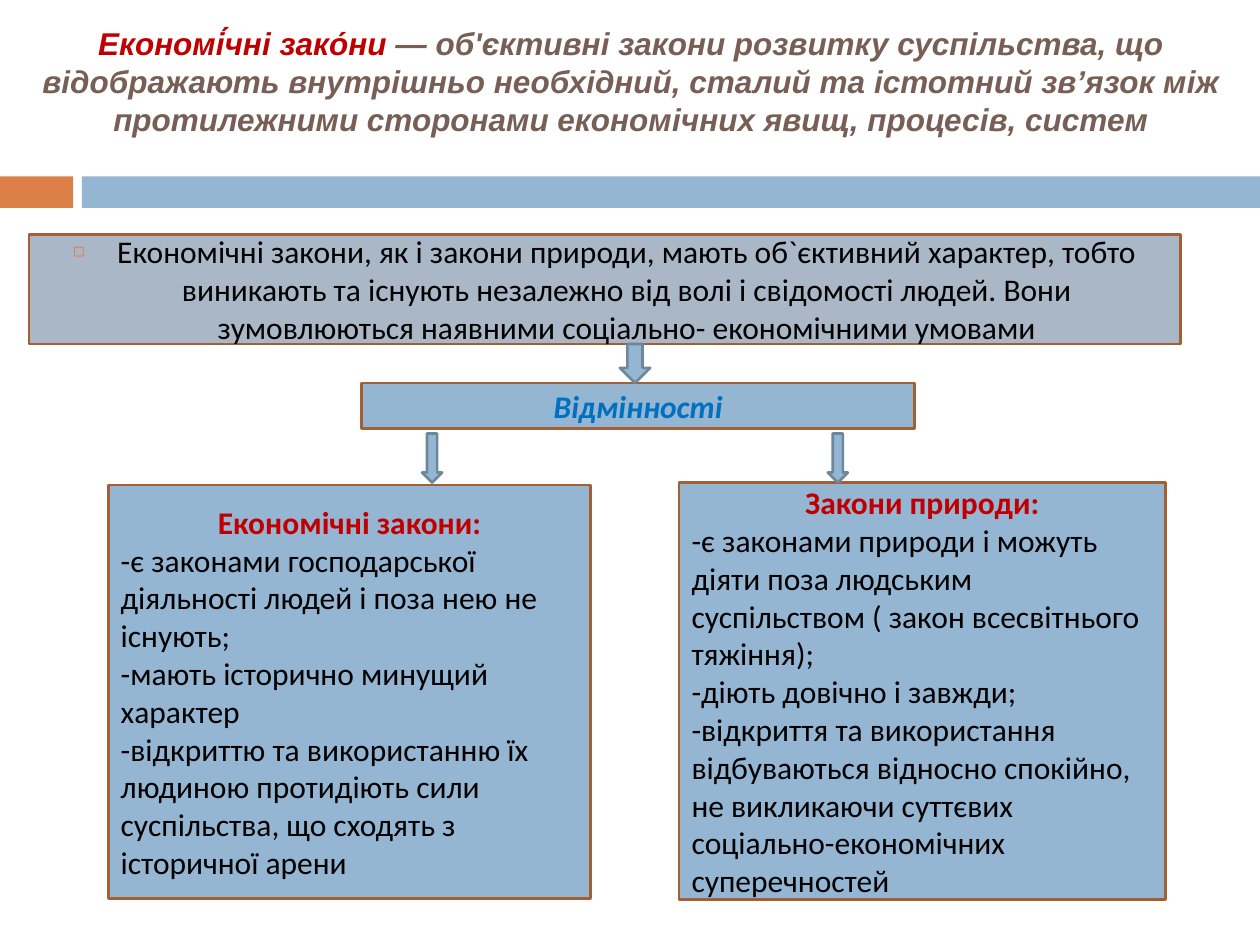
from lxml.etree import SubElement
from pptx import Presentation
from pptx.dml.color import RGBColor
from pptx.enum.shapes import MSO_SHAPE
from pptx.enum.text import MSO_ANCHOR, MSO_AUTO_SIZE, PP_ALIGN
from pptx.oxml.ns import qn
from pptx.util import Inches, Pt

COLORS = {
    "orange": "DD8047", "blue": "94B6D2", "gray_blue": "AAB7C6",
    "border": "A35F35", "arrow_line": "6D879B", "brown": "775F55",
    "red": "C00000", "accent": "0070C0", "black": "000000",
}


def paint(shape, fill, line=None):
    shape.fill.solid()
    shape.fill.fore_color.rgb = RGBColor.from_string(COLORS[fill])
    if line:
        shape.line.color.rgb = RGBColor.from_string(COLORS[line])
        shape.line.width = Pt(1.5)
    else:
        shape.line.fill.background()


def add_span(para, text, color, font="Calibri", bold=False, italic=False):
    span = para.add_run()
    span.text = text
    span.font.name = font
    span.font.size = Pt(18)
    span.font.bold = bold
    span.font.italic = italic
    span.font.color.rgb = RGBColor.from_string(COLORS[color])


deck = Presentation()
deck.slide_width = Inches(10)
deck.slide_height = Inches(7.5)
page = deck.slides.add_slide(deck.slide_layouts[1])

for left, width, fill in [(0, 0.58, "orange"), (0.65, 9.35, "blue")]:
    band = page.shapes.add_shape(
        MSO_SHAPE.RECTANGLE, Inches(left), Inches(1.4), Inches(width), Inches(0.25))
    band.shadow.inherit = False
    paint(band, fill)

title = page.shapes.title
body = page.placeholders[1]
for holder, place in [(title, (0.2, 0.25, 9.61, 1.08)), (body, (0.23, 1.86, 9.14, 0.87))]:
    holder.left, holder.top, holder.width, holder.height = map(Inches, place)
    holder.text_frame.auto_size = MSO_AUTO_SIZE.NONE
    holder.text_frame.word_wrap = True
    holder.text_frame.vertical_anchor = MSO_ANCHOR.MIDDLE
    holder.text_frame.paragraphs[0].alignment = PP_ALIGN.CENTER

title.text_frame.margin_bottom = Inches(0.35)
para = title.text_frame.paragraphs[0]
add_span(para, "Економі́чні зако́ни ", "red", "Arial", True, True)
add_span(
    para,
    "— об'єктивні закони розвитку суспільства, що відображають внутрішньо "
    "необхідний, сталий та істотний зв’язок між протилежними сторонами "
    "економічних явищ, процесів, систем",
    "brown", "Arial", True, True)

paint(body, "gray_blue", "border")
para = body.text_frame.paragraphs[0]
para.space_before = Pt(7)
bullet = para._p.get_or_add_pPr()
bullet.set("marL", str(Inches(0.35)))
bullet.set("indent", str(Inches(-0.35)))
bullet_color = SubElement(bullet, qn("a:buClr"))
SubElement(bullet_color, qn("a:srgbClr"), val=COLORS["orange"])
SubElement(bullet, qn("a:buSzPct"), val="60000")
SubElement(bullet, qn("a:buChar"), char="◻")
add_span(
    para,
    "Економічні закони, як і закони природи, мають об`єктивний характер, тобто "
    "виникають та існують незалежно від волі і свідомості людей. Вони "
    "зумовлюються наявними соціально- економічними умовами",
    "black")

boxes = [
    ((2.87, 3.04, 4.39, 0.36), "Відмінності", "accent", True, []),
    ((0.86, 3.85, 3.83, 3.28), "Економічні закони:", "red", False, [
        "-є законами господарської діяльності людей і поза нею не існують;",
        "-мають історично минущий характер",
        "-відкриттю та використанню їх людиною протидіють сили суспільства, "
        "що сходять з історичної арени",
    ]),
    ((5.39, 3.83, 3.86, 3.31), "Закони природи:", "red", False, [
        "-є законами природи і можуть діяти поза людським суспільством "
        "( закон всесвітнього тяжіння);",
        "-діють довічно і завжди;",
        "-відкриття та використання відбуваються відносно спокійно, "
        "не викликаючи суттєвих соціально-економічних суперечностей",
    ]),
]
for place, heading, color, italic, points in boxes:
    box = page.shapes.add_shape(MSO_SHAPE.RECTANGLE, *map(Inches, place))
    box.shadow.inherit = False
    paint(box, "blue", "border")
    frame = box.text_frame
    frame.word_wrap = True
    frame.vertical_anchor = MSO_ANCHOR.MIDDLE
    para = frame.paragraphs[0]
    para.alignment = PP_ALIGN.CENTER
    add_span(para, heading, color, bold=True, italic=italic)
    for point in points:
        para = frame.add_paragraph()
        para.alignment = PP_ALIGN.LEFT
        add_span(para, point, "black")

for place in [(4.92, 2.73, 0.24, 0.31), (3.35, 3.44, 0.16, 0.39), (6.57, 3.44, 0.16, 0.39)]:
    arrow = page.shapes.add_shape(MSO_SHAPE.DOWN_ARROW, *map(Inches, place))
    arrow.shadow.inherit = False
    paint(arrow, "blue", "arrow_line")

deck.save("out.pptx")
